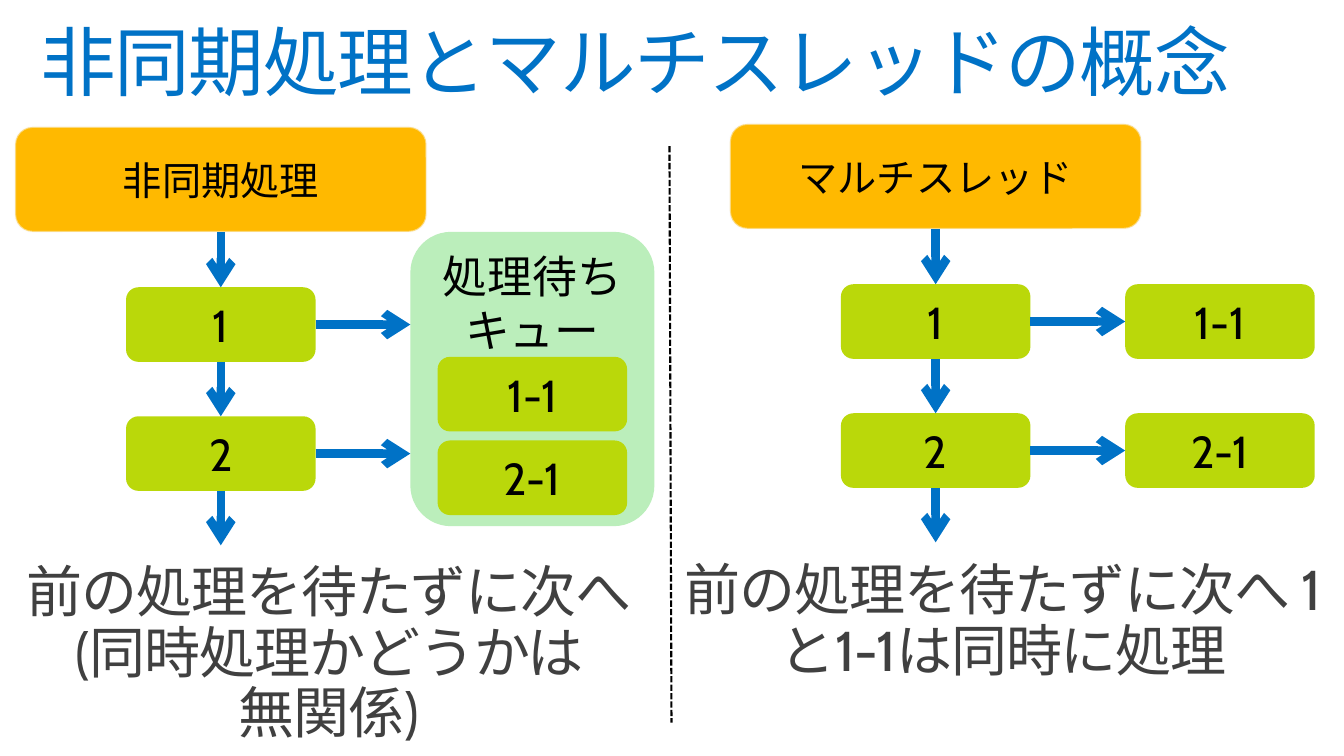
from lxml import etree
from pptx import Presentation
from pptx.dml.color import RGBColor
from pptx.enum.dml import MSO_LINE
from pptx.enum.shapes import MSO_CONNECTOR, MSO_SHAPE
from pptx.enum.text import MSO_ANCHOR, MSO_AUTO_SIZE, PP_ALIGN
from pptx.oxml.ns import qn
from pptx.util import Inches, Pt

STRAIGHT = MSO_CONNECTOR.STRAIGHT
ROUNDED = MSO_SHAPE.ROUNDED_RECTANGLE
DASH = MSO_LINE.SQUARE_DOT
TOP, MIDDLE = MSO_ANCHOR.TOP, MSO_ANCHOR.MIDDLE
LEFT, CENTER = PP_ALIGN.LEFT, PP_ALIGN.CENTER
NO_FIT = MSO_AUTO_SIZE.NONE

FONT = "Cabin"
COLORS = {
    "blue": "0072C6", "orange": "FFB900", "green": "BAD80A", "queue": "BBEEBB",
    "edge": "F9F9F9", "black": "000000", "caption": "404040",
}
CELL = 0.1  # inches per grid column and row
SIDE_BOTTOM, SIDE_RIGHT = 2, 3
HEADER_W, HEADER_H = 40.8, 10.4
STEP_W, STEP_H = 18.8, 7.4
STEP_X, STEP_Y, STEP_PITCH = 11, 15.9, 12.8
BRANCH_X = 39.2
QUEUE_W, QUEUE_H = 24.2, 29.2
QUEUED_X, QUEUED_Y, QUEUED_PITCH = 41.9, 22.8, 8.3
EXIT_LENGTH, BRANCH_GAP = 5.4, BRANCH_X - STEP_X - STEP_W


def grid(*cells):
    return [Inches(n * CELL) for n in cells]


def color(name):
    return RGBColor.from_string(COLORS[name])


def style_text(tf, size, name, align=CENTER, anchor=TOP, inset=0.0, spacing=0.0):
    tf.word_wrap = True
    tf.auto_size = NO_FIT
    tf.vertical_anchor = anchor
    tf.margin_left = tf.margin_right = tf.margin_top = tf.margin_bottom = Inches(inset)
    for p in tf.paragraphs:
        p.alignment = align
        for r in p.runs:
            r.font.size = Pt(size)
            r.font.name = FONT
            r.font.color.rgb = color(name)
            if spacing:
                r._r.get_or_add_rPr().set("spc", str(round(spacing * 100)))


def add_box(slide, box, text, fill, size=32, anchor=MIDDLE):
    sp = slide.shapes.add_shape(ROUNDED, *grid(*box))
    sp.shadow.inherit = False
    sp.fill.solid()
    sp.fill.fore_color.rgb = color(fill)
    sp.line.fill.background()
    sp.text_frame.text = text
    style_text(sp.text_frame, size, "black", anchor=anchor, inset=0.05)
    return sp


def add_line(slide, points, name, width):
    line = slide.shapes.add_connector(STRAIGHT, *points)
    line.line.color.rgb = color(name)
    line.line.width = Pt(width)
    etree.SubElement(line._element.spPr, qn("a:effectLst"))
    return line


def add_arrow(slide, source, side, target=None, length=0.0):
    """Joins source to the facing side of target, or runs straight for length."""
    down = side == SIDE_BOTTOM
    x = source.left + (source.width // 2 if down else source.width)
    y = source.top + (source.height if down else source.height // 2)
    run = Inches(length * CELL)
    end = (x, y + run) if down else (x + run, y)
    arrow = add_line(slide, (x, y, *end), "blue", 6)
    arrow.begin_connect(source, side)
    if target is not None:
        arrow.end_connect(target, side - 2)
    etree.SubElement(arrow.line._get_or_add_ln(), qn("a:tailEnd"), type="arrow")


def add_header(slide, x, y, text):
    header = add_box(slide, (x, y, HEADER_W, HEADER_H), text, "orange", 28)
    header.line.width = Pt(1.35)
    header.line.color.rgb = color("edge")
    edge = header.line._get_or_add_ln().find(".//" + qn("a:srgbClr"))
    etree.SubElement(edge, qn("a:alpha"), val="50000")
    return header


def add_flow(slide, x, y, title):
    """Draws the header and its two steps, and returns the steps."""
    header = add_header(slide, x, y, title)
    steps = [
        add_box(slide, (x + STEP_X, y + STEP_Y + i * STEP_PITCH, STEP_W, STEP_H),
                str(i + 1), "green")
        for i in range(2)
    ]
    for source, target in zip([header, *steps], steps):
        add_arrow(slide, source, SIDE_BOTTOM, target)
    add_arrow(slide, steps[-1], SIDE_BOTTOM, length=EXIT_LENGTH)
    return steps


def add_async_panel(slide, x, y):
    steps = add_flow(slide, x, y, "非同期処理")
    add_box(slide, (x + BRANCH_X, y + HEADER_H, QUEUE_W, QUEUE_H),
            "処理待ちキュー", "queue", anchor=TOP)
    for i, step in enumerate(steps):
        add_arrow(slide, step, SIDE_RIGHT, length=BRANCH_GAP)
        add_box(slide, (x + QUEUED_X, y + QUEUED_Y + i * QUEUED_PITCH, STEP_W, STEP_H),
                f"{i + 1}-1", "green")


def add_thread_panel(slide, x, y):
    for i, step in enumerate(add_flow(slide, x, y, "マルチスレッド")):
        top = y + STEP_Y + i * STEP_PITCH
        branch = add_box(slide, (x + BRANCH_X, top, STEP_W, STEP_H), f"{i + 1}-1", "green")
        add_arrow(slide, step, SIDE_RIGHT, branch)


def place(sp, box):
    sp.left, sp.top, sp.width, sp.height = grid(*box)


def fill_title(sp, box, text):
    place(sp, box)
    sp.text_frame.text = text
    sp.text_frame.paragraphs[0].line_spacing = 0.9
    style_text(sp.text_frame, 54, "blue", align=LEFT, spacing=-1)


def fill_caption(sp, box, text):
    place(sp, box)
    p = sp.text_frame.paragraphs[0]
    p.text = text
    p.line_spacing = 0.9
    p.space_before = Pt(24)
    pPr = p._p.get_or_add_pPr()
    pPr.set("marL", "0")
    pPr.set("indent", "0")
    etree.SubElement(pPr, qn("a:buNone"))
    style_text(sp.text_frame, 40, "caption", spacing=-0.7)


def main():
    prs = Presentation()
    prs.slide_width, prs.slide_height = Inches(13.33), Inches(7.5)
    slide = prs.slides.add_slide(prs.slide_layouts[3])
    title, left, right = list(slide.placeholders)[:3]
    fill_title(title, (4, 2.5, 129.3, 8.2), "非同期処理とマルチスレッドの概念")
    add_thread_panel(slide, 72.4, 12.3)
    add_async_panel(slide, 1.5, 12.6)
    divider = add_line(slide, grid(66.4, 14.5, 66.6, 71.7), "black", 1.5)
    divider.line.dash_style = DASH
    fill_caption(right, (67.8, 55.8, 63.4, 15.9), "前の処理を待たずに次へ 1と1-1は同時に処理")
    fill_caption(left, (1, 56, 63.3, 15.9),
                 "前の処理を待たずに次へ(同時処理かどうかは\v無関係)")
    prs.save("out.pptx")


if __name__ == "__main__":
    main()
